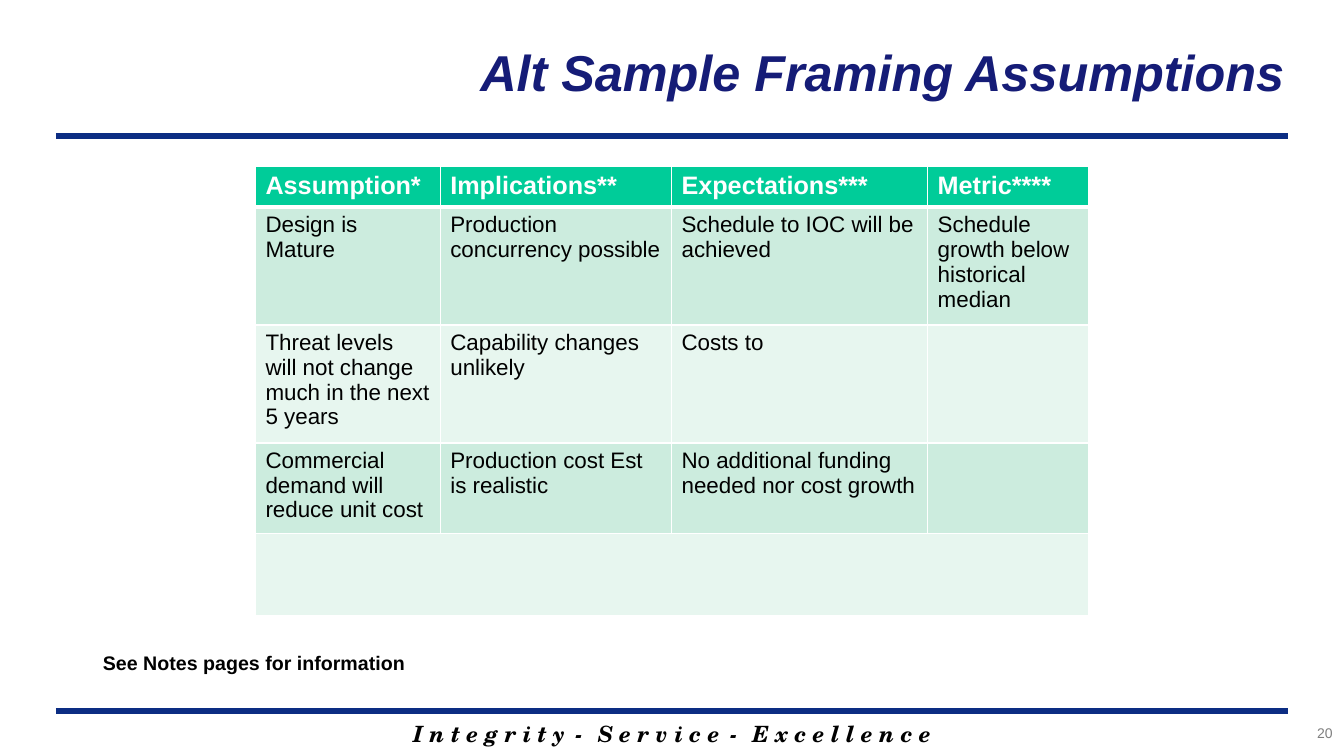
from lxml.etree import SubElement
from pptx import Presentation
from pptx.dml.color import RGBColor
from pptx.enum.shapes import MSO_CONNECTOR as Connector
from pptx.enum.text import MSO_ANCHOR as Anchor, MSO_AUTO_SIZE as AutoSize, PP_ALIGN as Align
from pptx.oxml.ns import qn
from pptx.util import Pt

WHITE = RGBColor(0xFF, 0xFF, 0xFF)
BLACK = RGBColor(0x00, 0x00, 0x00)
GRAY = RGBColor(0x7F, 0x7F, 0x7F)
TITLE_BLUE = RGBColor(0x15, 0x1C, 0x77)
RULE_BLUE = RGBColor(0x0C, 0x2D, 0x83)
HEADER_GREEN = RGBColor(0x00, 0xCC, 0x99)
BAND_GREENS = RGBColor(0xCC, 0xEC, 0xDE), RGBColor(0xE7, 0xF6, 0xEF)

COLUMN_WIDTHS = 132, 165.2, 183, 115
ROW_HEIGHTS = 29.2, 84.2, 84.2, 64.5, 58.3
ROWS = (
    ("Assumption*", "Implications**", "Expectations***", "Metric****"),
    ("Design is Mature", "Production concurrency possible",
     "Schedule to IOC will be achieved", "Schedule growth below historical median"),
    ("Threat levels will not change much in the next 5 years",
     "Capability changes unlikely", "Costs to", ""),
    ("Commercial demand will reduce unit cost", "Production cost Est is realistic",
     "No additional funding needed nor cost growth", ""),
    ("", "", "", ""),
)
MOTTO = "I n t e g r i t y", " - ", "S e r v i c e", " - ", "E x c e l l e n c e"


class SlideBuilder:
    """Draws styled elements on one slide, with lengths in points."""

    def __init__(self, presentation, font_name="Arial"):
        self.slide = presentation.slides.add_slide(presentation.slide_layouts[5])
        self.font_name = font_name

    def style(self, paragraph, size, color, bold=False, italic=False, name=None):
        font = paragraph.font
        font.name, font.size = name or self.font_name, Pt(size)
        font.bold, font.italic = bold, italic
        font.color.rgb = color

    def title(self, text, left, top, width, height):
        shape = self.slide.shapes.title
        shape.left, shape.top, shape.width, shape.height = map(Pt, (left, top, width, height))
        frame = shape.text_frame
        frame.text = text
        frame.auto_size, frame.vertical_anchor = AutoSize.NONE, Anchor.MIDDLE
        frame.paragraphs[0].alignment = Align.RIGHT
        self.style(frame.paragraphs[0], 36, TITLE_BLUE, bold=True, italic=True)

    def rule(self, left, right, y):
        line = self.slide.shapes.add_connector(
            Connector.STRAIGHT, Pt(left), Pt(y), Pt(right), Pt(y))
        line.line.color.rgb, line.line.width = RULE_BLUE, Pt(4.5)
        SubElement(line._element.spPr, qn("a:effectLst"))

    def text(self, parts, box, align, size, color, wrap=True, separator_spacing=0, **font):
        frame = self.slide.shapes.add_textbox(*map(Pt, box)).text_frame
        frame.word_wrap = wrap
        paragraph = frame.paragraphs[0]
        paragraph.alignment = align
        for part in parts:
            run = paragraph.add_run()
            run.text = part
            if separator_spacing and part.strip() == "-":
                run._r.get_or_add_rPr().set("spc", str(separator_spacing * 100))
        self.style(paragraph, size, color, **font)

    def borders(self, cell, bottom):
        properties = cell._tc.get_or_add_tcPr()
        for side, width in (("L", 1), ("R", 1), ("T", 1), ("B", bottom)):
            line = SubElement(properties, qn(f"a:ln{side}"), w=str(Pt(width)))
            fill = SubElement(line, qn("a:solidFill"))
            SubElement(fill, qn("a:srgbClr"), val=str(WHITE))

    def table(self, rows, left, top, widths, heights):
        table = self.slide.shapes.add_table(
            len(rows), len(widths), Pt(left), Pt(top), Pt(sum(widths)), Pt(sum(heights))).table
        for column, width in zip(table.columns, widths):
            column.width = Pt(width)
        for index, (row, height, texts) in enumerate(zip(table.rows, heights, rows)):
            row.height = Pt(height)
            header = index == 0
            for cell, text in zip(row.cells, texts):
                self.borders(cell, 3 if header else 1)
                cell.fill.solid()
                cell.fill.fore_color.rgb = HEADER_GREEN if header else BAND_GREENS[(index - 1) % 2]
                cell.text = text
                self.style(cell.text_frame.paragraphs[0], 18 if header else 16,
                           WHITE if header else BLACK, bold=header)
        last = len(rows) - 1
        table.cell(last, 0).merge(table.cell(last, len(widths) - 1))


def main():
    presentation = Presentation()
    presentation.slide_width, presentation.slide_height = Pt(960), Pt(540)
    builder = SlideBuilder(presentation)
    builder.text(MOTTO, (136, 511, 688, 27), Align.CENTER, 16, BLACK, separator_spacing=3,
                 bold=True, italic=True, name="TeX Gyre Schola")
    for y in (508, 97):
        builder.rule(40, 920, y)
    builder.title("Alt Sample Framing Assumptions", 175, 6, 750, 90)
    builder.table(ROWS, 182.5, 118.8, COLUMN_WIDTHS, ROW_HEIGHTS)
    builder.text(["See Notes pages for information"], (66, 461.5, 231, 24.5), Align.CENTER,
                 14, BLACK, wrap=False, bold=True)
    builder.text(["20"], (839, 514, 120, 24), Align.RIGHT, 10, GRAY)
    presentation.save("out.pptx")


if __name__ == "__main__":
    main()
